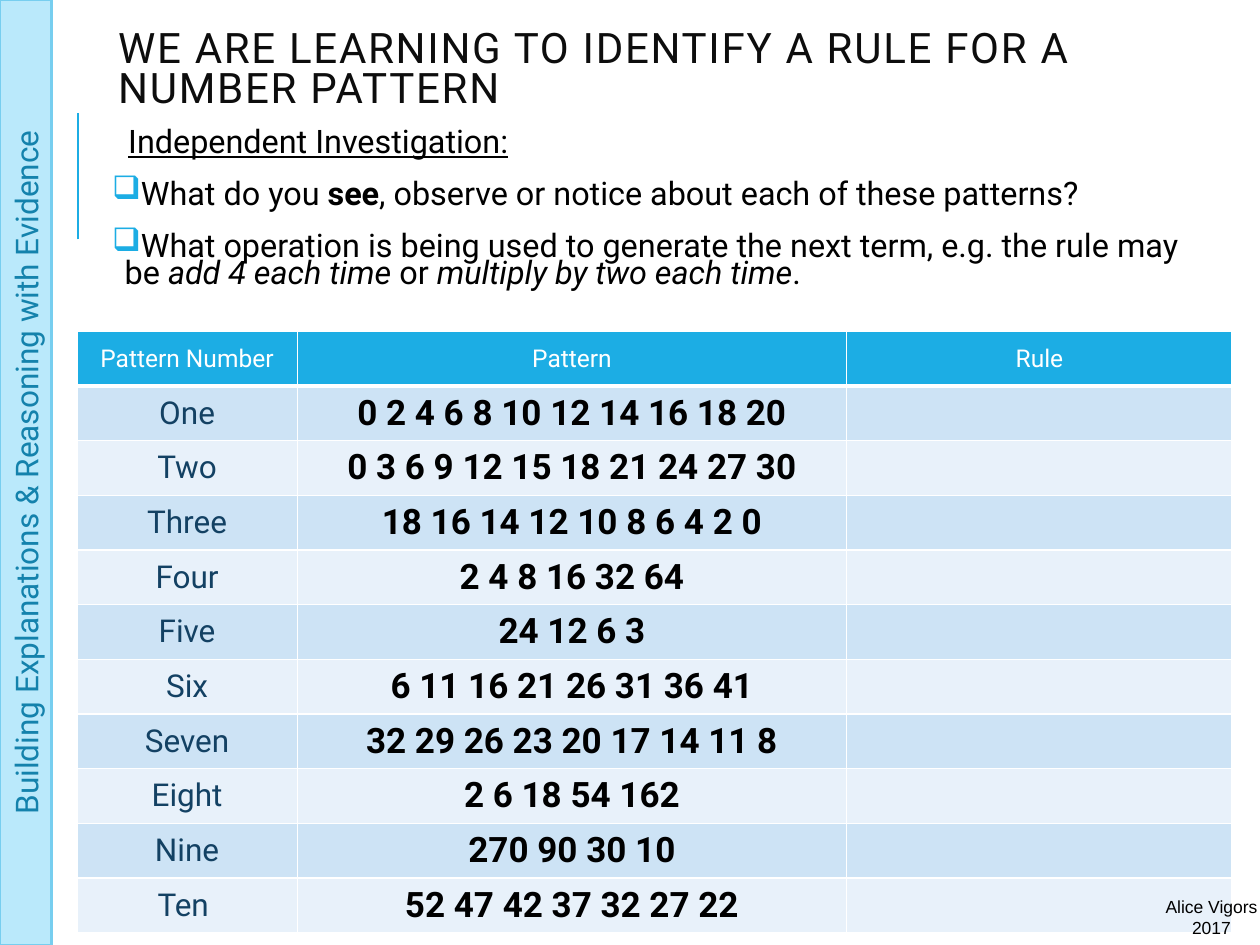
from dataclasses import dataclass
from lxml.etree import SubElement
from pptx import Presentation
from pptx.dml.color import RGBColor
from pptx.enum.shapes import MSO_CONNECTOR, MSO_SHAPE
from pptx.enum.text import MSO_ANCHOR, PP_ALIGN
from pptx.oxml.ns import qn
from pptx.slide import Slide
from pptx.util import Inches, Pt

BLUE = RGBColor(0x1C, 0xAD, 0xE4)
DEEP_BLUE = RGBColor(0x14, 0x82, 0xAC)
NAVY = RGBColor(0x13, 0x41, 0x63)
PALE_BLUE = RGBColor(0xBA, 0xE9, 0xFB)
EDGE_BLUE = RGBColor(0x77, 0xCE, 0xEF)
BAND_DARK = RGBColor(0xCD, 0xE3, 0xF5)
BAND_LIGHT = RGBColor(0xE8, 0xF1, 0xFA)
INK = RGBColor(0x0D, 0x0D, 0x0D)
BLACK = RGBColor(0, 0, 0)
WHITE = RGBColor(0xFF, 0xFF, 0xFF)

TITLE = "WE ARE LEARNING TO IDENTIFY A RULE FOR A NUMBER PATTERN"
QUESTIONS = [
    (" ", [("Independent Investigation:", "underline")]),
    ("❑", [("What do you ", ""), ("see", "bold"),
           (", observe or notice about each of these patterns?", "")]),
    ("❑", [("What operation is being used to generate the next term, "
            "e.g. the rule may be ", ""),
           ("add 4 each time", "italic"), (" or ", ""),
           ("multiply by two each time", "italic"), (".", "")]),
]
HEADERS = ["Pattern Number", "Pattern", "Rule"]
PATTERNS = [
    ("One", "0 2 4 6 8 10 12 14 16 18 20"),
    ("Two", "0 3 6 9 12 15 18 21 24 27 30"),
    ("Three", "18 16 14 12 10 8 6 4 2 0"),
    ("Four", "2 4 8 16 32 64"),
    ("Five", "24 12 6 3"),
    ("Six", "6 11 16 21 26 31 36 41"),
    ("Seven", "32 29 26 23 20 17 14 11 8"),
    ("Eight", "2 6 18 54 162"),
    ("Nine", "270 90 30 10"),
    ("Ten ", "52 47 42 37 32 27 22"),
]


@dataclass
class Deck:
    s: Slide
    font: str = "Roboto"

    def run(self, p, text, size, color, style="", font=None):
        r = p.add_run()
        r.text = text
        r.font.name = font or self.font
        r.font.size = Pt(size)
        r.font.color.rgb = color
        if style:
            setattr(r.font, style, True)
        return r

    def text_box(self, x, y, w, h, inset=None):
        box = self.s.shapes.add_textbox(Inches(x), Inches(y), Inches(w), Inches(h))
        tf = box.text_frame
        tf.word_wrap = True
        if inset is not None:
            tf.margin_left = tf.margin_right = Inches(inset)
            tf.margin_top = tf.margin_bottom = Inches(inset)
        return tf

    def line(self, x1, y1, x2, y2, color, width):
        c = self.s.shapes.add_connector(
            MSO_CONNECTOR.STRAIGHT, Inches(x1), Inches(y1), Inches(x2), Inches(y2))
        c.line.color.rgb = color
        c.line.width = Pt(width)
        SubElement(c._element.spPr, qn("a:effectLst"))

    def title(self, text, x, y, w, h):
        tf = self.text_box(x, y, w, h)
        tf.vertical_anchor = MSO_ANCHOR.MIDDLE
        p = tf.paragraphs[0]
        p.line_spacing = 0.8
        r = self.run(p, text, 24, INK)
        r._r.get_or_add_rPr().set("spc", "100")
        p.add_line_break()

    def bullets(self, items, x, y, w, h):
        tf = self.text_box(x, y, w, h, 0.05)
        for i, (mark, runs) in enumerate(items):
            p = tf.add_paragraph() if i else tf.paragraphs[0]
            p.line_spacing = 0.7
            p.space_before = Pt(12)
            p.space_after = Pt(2)
            pPr = p._p.get_or_add_pPr()
            pPr.set("marL", str(Inches(0.1)))
            pPr.set("indent", str(-Inches(0.1)))
            clr = SubElement(pPr, qn("a:buClr"))
            SubElement(clr, qn("a:srgbClr"), val=str(BLUE))
            SubElement(pPr, qn("a:buChar"), char=mark)
            for text, style in runs:
                self.run(p, text, 18.5, BLACK, style)

    def side_bar(self, text, x, y, w, h):
        sp = self.s.shapes.add_shape(
            MSO_SHAPE.RECTANGLE, Inches(x), Inches(y), Inches(w), Inches(h))
        sp.shadow.inherit = False
        sp.fill.solid()
        sp.fill.fore_color.rgb = PALE_BLUE
        sp.line.color.rgb = EDGE_BLUE
        sp.line.width = Pt(1.25)
        tf = sp.text_frame
        tf.vertical_anchor = MSO_ANCHOR.MIDDLE
        tf._txBody.bodyPr.set("vert", "vert270")
        p = tf.paragraphs[0]
        p.alignment = PP_ALIGN.CENTER
        self.run(p, text, 18, DEEP_BLUE)

    def cell(self, cell, text, size, color, fill, style="", bottom=1):
        cell.vertical_anchor = MSO_ANCHOR.MIDDLE
        tcPr = cell._tc.get_or_add_tcPr()
        for side in ("L", "R", "T", "B"):
            width = Pt(bottom if side == "B" else 1)
            ln = SubElement(tcPr, qn(f"a:ln{side}"), w=str(width))
            SubElement(SubElement(ln, qn("a:solidFill")), qn("a:srgbClr"), val=str(WHITE))
        cell.fill.solid()
        cell.fill.fore_color.rgb = fill
        if text:
            p = cell.text_frame.paragraphs[0]
            p.alignment = PP_ALIGN.CENTER
            self.run(p, text, size, color, style)

    def table(self, headers, rows, x, y, widths, h):
        table = self.s.shapes.add_table(
            len(rows) + 1, len(headers), Inches(x), Inches(y),
            Inches(sum(widths)), Inches(h)).table
        for col, width in zip(table.columns, widths):
            col.width = Inches(width)
        for j, header in enumerate(headers):
            self.cell(table.cell(0, j), header, 14, WHITE, BLUE, bottom=3)
        for i, (number, pattern) in enumerate(rows, 1):
            band = BAND_DARK if i % 2 else BAND_LIGHT
            self.cell(table.cell(i, 0), number, 18, NAVY, band)
            self.cell(table.cell(i, 1), pattern, 20, BLACK, band, "bold")
            self.cell(table.cell(i, 2), "", 18, NAVY, band)

    def credit(self, text, x, y, w, h):
        p = self.text_box(x, y, w, h).paragraphs[0]
        p.alignment = PP_ALIGN.CENTER
        self.run(p, text, 10, BLACK, font="Arial")


def main():
    prs = Presentation()
    prs.slide_width = Inches(10)
    prs.slide_height = Inches(7.5)
    deck = Deck(prs.slides.add_slide(prs.slide_layouts[6]))
    deck.line(0.62, 1.9, 0.62, 0.9, BLUE, 1.5)
    deck.bullets(QUESTIONS, 0.84, 1, 8.77, 1.71)
    deck.title(TITLE, 0.84, 0.32, 8.77, 0.79)
    deck.side_bar("Building Explanations & Reasoning with Evidence", 0, 0, 0.41, 7.5)
    deck.table(HEADERS, PATTERNS, 0.61, 2.63, [1.75, 4.36, 3.06], 4.77)
    deck.credit("Alice Vigors 2017", 9.08, 7.06, 1.07, 0.44)
    prs.save("out.pptx")


if __name__ == "__main__":
    main()
